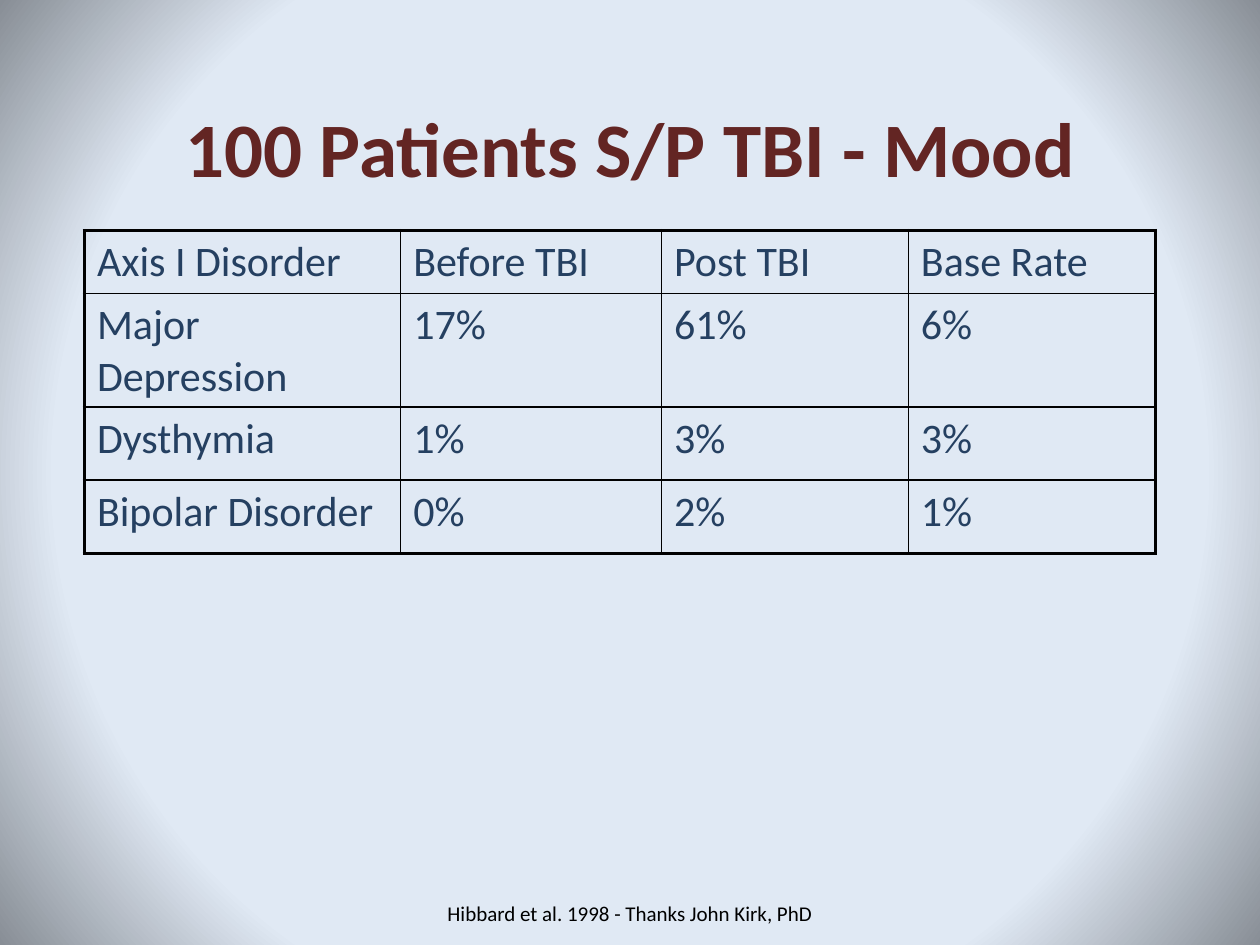
from lxml import etree
from pptx import Presentation
from pptx.dml.color import RGBColor
from pptx.enum.text import MSO_ANCHOR, PP_ALIGN
from pptx.oxml import parse_xml
from pptx.oxml.ns import nsdecls, qn
from pptx.util import Inches, Pt

FONT = "Calibri"
MAROON = RGBColor(0x63, 0x25, 0x23)
NAVY = RGBColor(0x25, 0x40, 0x61)
BLACK = RGBColor(0, 0, 0)
PALE_BLUE = RGBColor(0xE0, 0xE9, 0xF4)
GREY = RGBColor(0x88, 0x8E, 0x96)
LEFT, CENTER = PP_ALIGN.LEFT, PP_ALIGN.CENTER
TOP, MIDDLE = MSO_ANCHOR.TOP, MSO_ANCHOR.MIDDLE
THIN, THICK = Pt(1), Pt(2.25)

COLUMN_WIDTHS = [2.51, 2.07, 1.96, 1.96]
ROW_HEIGHTS = [0.5, 0.87, 0.58, 0.58]
DISORDER_RATES = [
    ["Axis I Disorder", "Before TBI", "Post TBI", "Base Rate"],
    ["Major Depression", "17%", "61%", "6%"],
    ["Dysthymia", "1%", "3%", "3%"],
    ["Bipolar Disorder", "0%", "2%", "1%"],
]


def write_text(tf, text, size, color, bold=False, align=LEFT):
    p = tf.paragraphs[0]
    p.alignment = align
    r = p.add_run()
    r.text = text
    r.font.name = FONT
    r.font.size = Pt(size)
    r.font.bold = bold
    r.font.color.rgb = color


def add_text(slide, left, top, width, height, text, anchor=TOP, **text_format):
    box = slide.shapes.add_textbox(
        Inches(left), Inches(top), Inches(width), Inches(height))
    tf = box.text_frame
    tf.word_wrap = True
    tf.vertical_anchor = anchor
    write_text(tf, text, **text_format)


def set_radial_background(slide):
    fill = slide.background.fill
    fill.gradient()
    grad = slide.background._cSld.find(".//" + qn("a:gradFill"))
    for child in list(grad):
        grad.remove(child)
    stops = etree.SubElement(grad, qn("a:gsLst"))
    for percent, color in [(0, PALE_BLUE), (73, PALE_BLUE), (100, GREY)]:
        stop = etree.SubElement(stops, qn("a:gs"), pos=str(percent * 1000))
        etree.SubElement(stop, qn("a:srgbClr"), val=str(color))
    center = etree.SubElement(grad, qn("a:path"), path="circle")
    etree.SubElement(center, qn("a:fillToRect"),
                     l="50000", t="50000", r="50000", b="50000")


def set_borders(cell, widths):
    tc_pr = cell._tc.get_or_add_tcPr()
    for i, (side, width) in enumerate(widths.items()):
        tc_pr.insert(i, parse_xml(
            f'<a:ln{side} {nsdecls("a")} w="{width}"><a:solidFill>'
            f'<a:srgbClr val="{BLACK}"/></a:solidFill></a:ln{side}>'))


def add_rate_table(slide, left, top):
    last_row, last_col = len(ROW_HEIGHTS) - 1, len(COLUMN_WIDTHS) - 1
    table = slide.shapes.add_table(
        last_row + 1, last_col + 1, Inches(left), Inches(top),
        Inches(sum(COLUMN_WIDTHS)), Inches(sum(ROW_HEIGHTS))).table
    table.first_row = table.horz_banding = False
    for column, width in zip(table.columns, COLUMN_WIDTHS):
        column.width = Inches(width)
    for row, height in zip(table.rows, ROW_HEIGHTS):
        row.height = Inches(height)

    for i, row_texts in enumerate(DISORDER_RATES):
        for j, text in enumerate(row_texts):
            cell = table.cell(i, j)
            cell.fill.background()
            write_text(cell.text_frame, text, size=24, color=NAVY)
            # Thick frame outside, thin rules inside
            set_borders(cell, {
                "L": THICK if j == 0 else THIN,
                "R": THICK if j == last_col else THIN,
                "T": THICK if i == 0 else THIN,
                "B": THICK if i == last_row else THIN,
            })


def main():
    prs = Presentation()
    prs.slide_width, prs.slide_height = Inches(10), Inches(7.5)
    slide = prs.slides.add_slide(prs.slide_layouts[6])
    set_radial_background(slide)

    # Source line
    add_text(slide, 3.25, 7, 3.5, 0.5,
             "Hibbard et al. 1998 - Thanks John Kirk, PhD",
             anchor=MIDDLE, size=12, color=BLACK, align=CENTER)

    # Title
    add_text(slide, 0.99, 0.75, 8.03, 1.17, "100 Patients S/P TBI - Mood",
             size=44, color=MAROON, bold=True, align=CENTER)

    # Rates of mood disorders
    add_rate_table(slide, 0.67, 1.83)

    prs.save("out.pptx")


if __name__ == "__main__":
    main()
